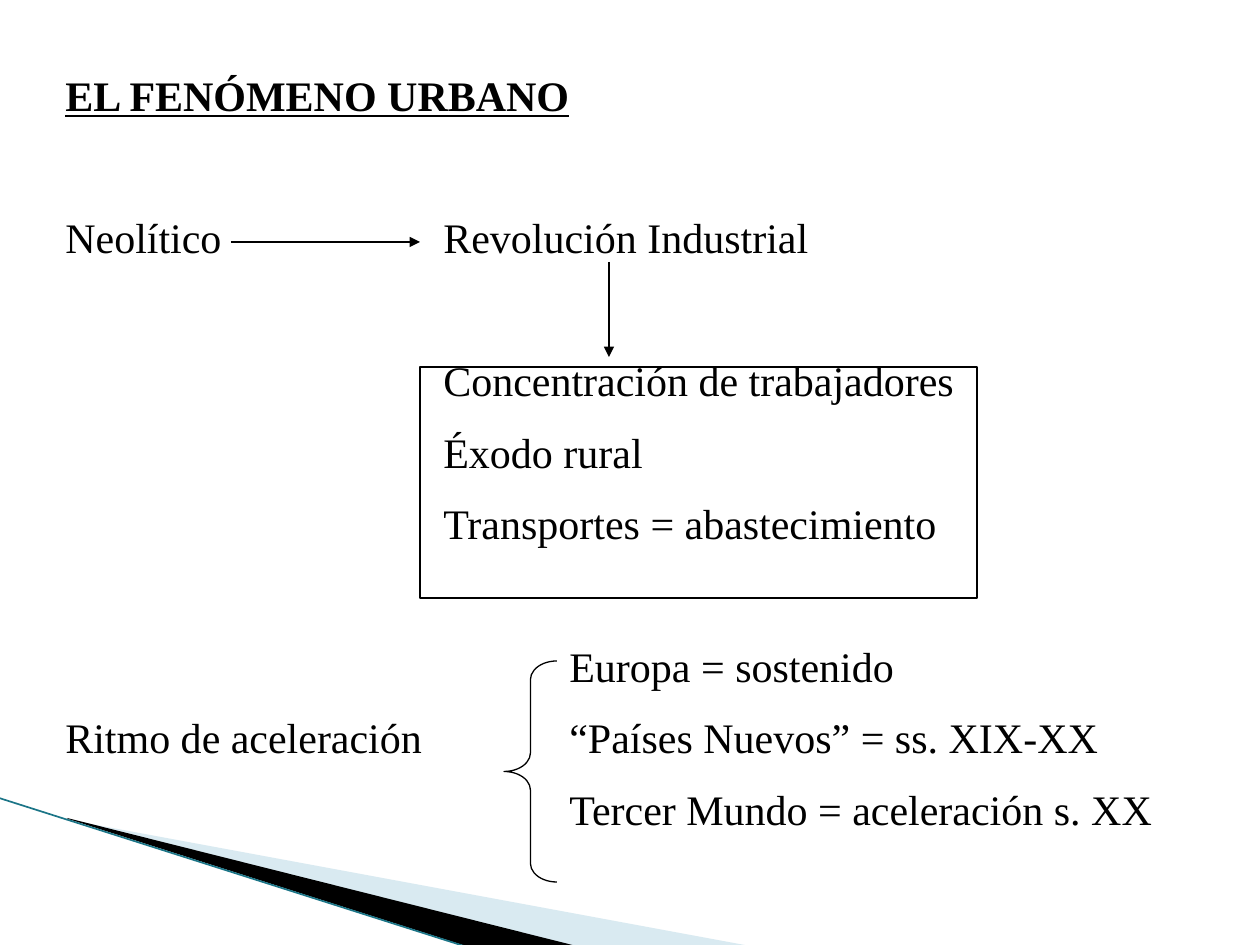
import pptx
import pptx.dml.color
import pptx.enum.shapes
import pptx.oxml
import pptx.oxml.ns
import pptx.util

EMU_PER_PX = 914400 / 126
SLIDE_SIZE = (1260, 945)
FONT = "Times New Roman"
TEXT_SIZE = 24
LINE_GAP = 12        # points between consecutive rows
ROW_PITCH = 40.8     # points from one row to the next

# Row number, tab stop in px, text
ROWS = [
    (0, None, "EL FENÓMENO URBANO"),
    (2, 378, "Neolítico\tRevolución Industrial"),
    (4, 378, "\tConcentración de trabajadores"),
    (5, 378, "\tÉxodo rural"),
    (6, 378, "\tTransportes = abastecimiento"),
    (8, 504, "\tEuropa = sostenido"),
    (9, 504, "Ritmo de aceleración\t“Países Nuevos” = ss. XIX-XX"),
    (10, 504, "\tTercer Mundo = aceleración s. XX"),
]
TEXT_AREA = (53, 63, 1134, 818)

# Points, fill, opacity in percent
WEDGES = [
    ([(69, 820), (750, 946), (575, 946), (69, 819)], "A0CBDC", 40),
    ([(67, 818), (576, 946), (469, 947), (68, 819)], "000000", 100),
]
EDGE = (-1, 798, 467, 947)
ARROWS = [(231, 242, 420, 242), (609, 262, 609, 357)]
BRACE = (504, 661, 53, 221)
FRAME = (420, 367, 557, 231)


def px(value):
    return pptx.util.Emu(round(value * EMU_PER_PX))


def color(hex_string):
    return pptx.dml.color.RGBColor.from_string(hex_string)


def add_element(parent, tag, **attributes):
    element = pptx.oxml.parse_xml(f"<{tag} {pptx.oxml.ns.nsdecls('a')}/>")
    for name, value in attributes.items():
        element.set(name, str(value))
    parent.append(element)
    return element


def add_text(paragraph, text, size=TEXT_SIZE, bold=False, underline=False, tab=None, before=0):
    if tab is not None:
        tabs = add_element(paragraph._p.get_or_add_pPr(), "a:tabLst")
        add_element(tabs, "a:tab", pos=px(tab), algn="l")
    paragraph.space_before = pptx.util.Pt(before)
    run = paragraph.add_run()
    run.text = text
    run.font.name = FONT
    run.font.size = pptx.util.Pt(size)
    run.font.bold = bold
    run.font.underline = underline
    run.font.color.rgb = color("000000")


def add_wedge(slide, points, fill, opacity):
    builder = slide.shapes.build_freeform(*points[0], scale=EMU_PER_PX)
    builder.add_line_segments(points[1:], close=True)
    shape = builder.convert_to_shape()
    shape.shadow.inherit = False
    shape.line.fill.background()
    shape.fill.solid()
    shape.fill.fore_color.rgb = color(fill)
    if opacity < 100:
        fill_color = shape._element.spPr.find(".//" + pptx.oxml.ns.qn("a:srgbClr"))
        add_element(fill_color, "a:alpha", val=opacity * 1000)


def add_line(slide, ends, line_color="000000", width=0.75, arrow=False):
    connector = slide.shapes.add_connector(
        pptx.enum.shapes.MSO_CONNECTOR.STRAIGHT, *map(px, ends))
    connector.line.color.rgb = color(line_color)
    connector.line.width = pptx.util.Pt(width)
    if arrow:
        add_element(connector.line._get_or_add_ln(), "a:tailEnd", type="triangle")
    add_element(connector._element.spPr, "a:effectLst")


def add_outline(slide, kind, area):
    shape = slide.shapes.add_shape(kind, *map(px, area))
    shape.shadow.inherit = False
    shape.fill.background()
    shape.line.color.rgb = color("000000")
    shape.line.width = pptx.util.Pt(0.75)
    return shape


def add_rows(slide):
    frame = slide.shapes.add_textbox(*map(px, TEXT_AREA)).text_frame
    frame.word_wrap = True
    previous = 0
    for row, tab, text in ROWS:
        title = row == 0
        paragraph = frame.paragraphs[0] if title else frame.add_paragraph()
        before = 0 if title else LINE_GAP + (row - previous - 1) * ROW_PITCH
        add_text(paragraph, text, bold=title, underline=title, tab=tab, before=before)
        previous = row


def main():
    presentation = pptx.Presentation()
    presentation.slide_width, presentation.slide_height = map(px, SLIDE_SIZE)
    slide = presentation.slides.add_slide(presentation.slide_layouts[6])
    for wedge in WEDGES:
        add_wedge(slide, *wedge)
    add_line(slide, EDGE, line_color="1B7587", width=0.95)
    add_rows(slide)
    brace = add_outline(slide, pptx.enum.shapes.MSO_SHAPE.LEFT_BRACE, BRACE)
    brace.adjustments[0] = 0.35
    brace.adjustments[1] = 0.5
    add_outline(slide, pptx.enum.shapes.MSO_SHAPE.RECTANGLE, FRAME)
    for ends in ARROWS:
        add_line(slide, ends, arrow=True)
    presentation.save("out.pptx")


if __name__ == "__main__":
    main()
